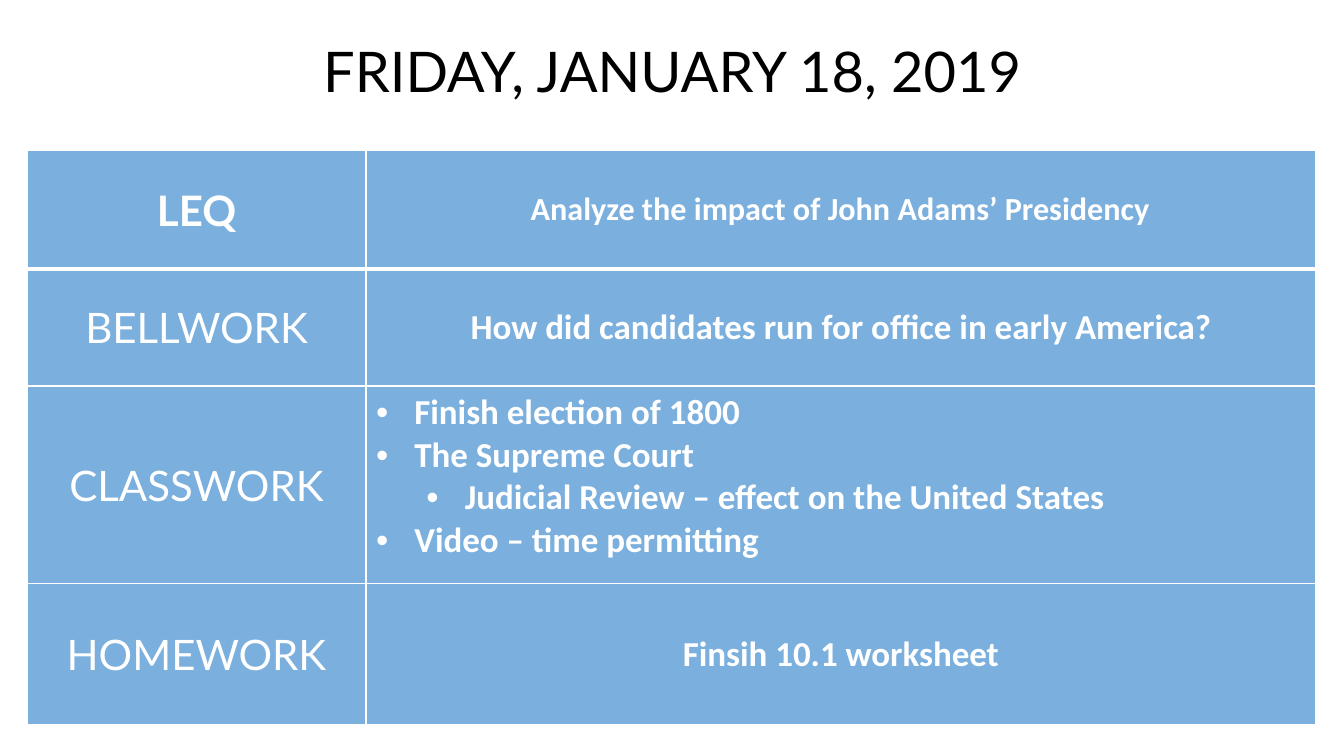
"""Build a class agenda slide with a date title and a four-row table."""
from lxml import etree
from pptx import Presentation
from pptx.dml.color import RGBColor
from pptx.enum import text
from pptx.oxml import ns
from pptx.util import Inches, Pt


def rgb(value):
    return RGBColor.from_string(value)


def fill_alpha(fill, props, color, percent):
    fill.solid()
    fill.fore_color.rgb = rgb(color)
    clr = props.find(ns.qn("a:solidFill")).find(ns.qn("a:srgbClr"))
    etree.SubElement(clr, ns.qn("a:alpha"), val=str(percent * 1000))


prs = Presentation()
prs.slide_width, prs.slide_height = Inches(13.33), Inches(7.5)
s = prs.slides.add_slide(prs.slide_layouts[5])

title = s.shapes.title
title.left, title.top = Inches(0.27), Inches(0.2)
title.width, title.height = Inches(12.79), Inches(1)
fill_alpha(title.fill, title._element.spPr, "FFFFFF", 65)
tf = title.text_frame
tf.text = "FRIDAY, JANUARY 18, 2019"
tf.vertical_anchor = text.MSO_ANCHOR.MIDDLE
p = tf.paragraphs[0]
p.alignment = text.PP_ALIGN.CENTER
font = p.runs[0].font
for name, value in {"name": "Lato", "size": Pt(40), "bold": False}.items():
    setattr(font, name, value)
font.color.rgb = rgb("000000")

agenda = [
    ("LEQ", 1.18, 23, [("Analyze the impact of John Adams’ Presidency", 0)]),
    ("BELLWORK", 1.16, 25, [("How did candidates run for office in early America?", 0)]),
    ("CLASSWORK", 1.96, 25, [
        ("Finish election of 1800", 0),
        ("The Supreme Court", 0),
        ("Judicial Review – effect on the United States", 1),
        ("Video – time permitting", 0),
    ]),
    ("HOMEWORK", 1.4, 25, [("Finsih 10.1 worksheet", 0)]),
]
table = s.shapes.add_table(len(agenda), 2, Inches(0.27), Inches(1.49),
                           Inches(12.78), Inches(5.7)).table
for column, width in zip(table.columns, (3.36, 9.42)):
    column.width = Inches(width)

for i, (label, height, size, items) in enumerate(agenda):
    table.rows[i].height = Inches(height)
    columns = [
        ([(label, 0)], {"name": "Lato", "size": Pt(30), "bold": i == 0}),
        (items, {"name": "Calibri", "size": Pt(size), "bold": True}),
    ]
    for j, (lines, style) in enumerate(columns):
        cell = table.cell(i, j)
        tcPr = cell._tc.get_or_add_tcPr()
        for side in "LRTB":
            heavy = (i, side) in ((0, "B"), (1, "T"))
            ln = etree.SubElement(tcPr, ns.qn("a:ln" + side), w=str(Pt(3 if heavy else 1)))
            solid = etree.SubElement(ln, ns.qn("a:solidFill"))
            etree.SubElement(solid, ns.qn("a:srgbClr"), val="FFFFFF")
        fill_alpha(cell.fill, tcPr, "5B9BD5", 80)

        bulleted = len(lines) > 1
        cell.vertical_anchor = text.MSO_ANCHOR.TOP if bulleted else text.MSO_ANCHOR.MIDDLE
        tf = cell.text_frame
        for k, (line, level) in enumerate(lines):
            p = tf.add_paragraph() if k else tf.paragraphs[0]
            if bulleted:
                p.level = level
                pPr = p._p.get_or_add_pPr()
                pPr.set("marL", str(Inches(0.38 + 0.5 * level)))
                pPr.set("indent", str(Inches(-0.38)))
                etree.SubElement(pPr, ns.qn("a:buFont"), typeface="Arial")
                etree.SubElement(pPr, ns.qn("a:buChar"), char="•")
            else:
                p.alignment = text.PP_ALIGN.CENTER
            r = p.add_run()
            r.text = line
            for name, value in style.items():
                setattr(r.font, name, value)
            r.font.color.rgb = rgb("FFFFFF")

prs.save("out.pptx")
